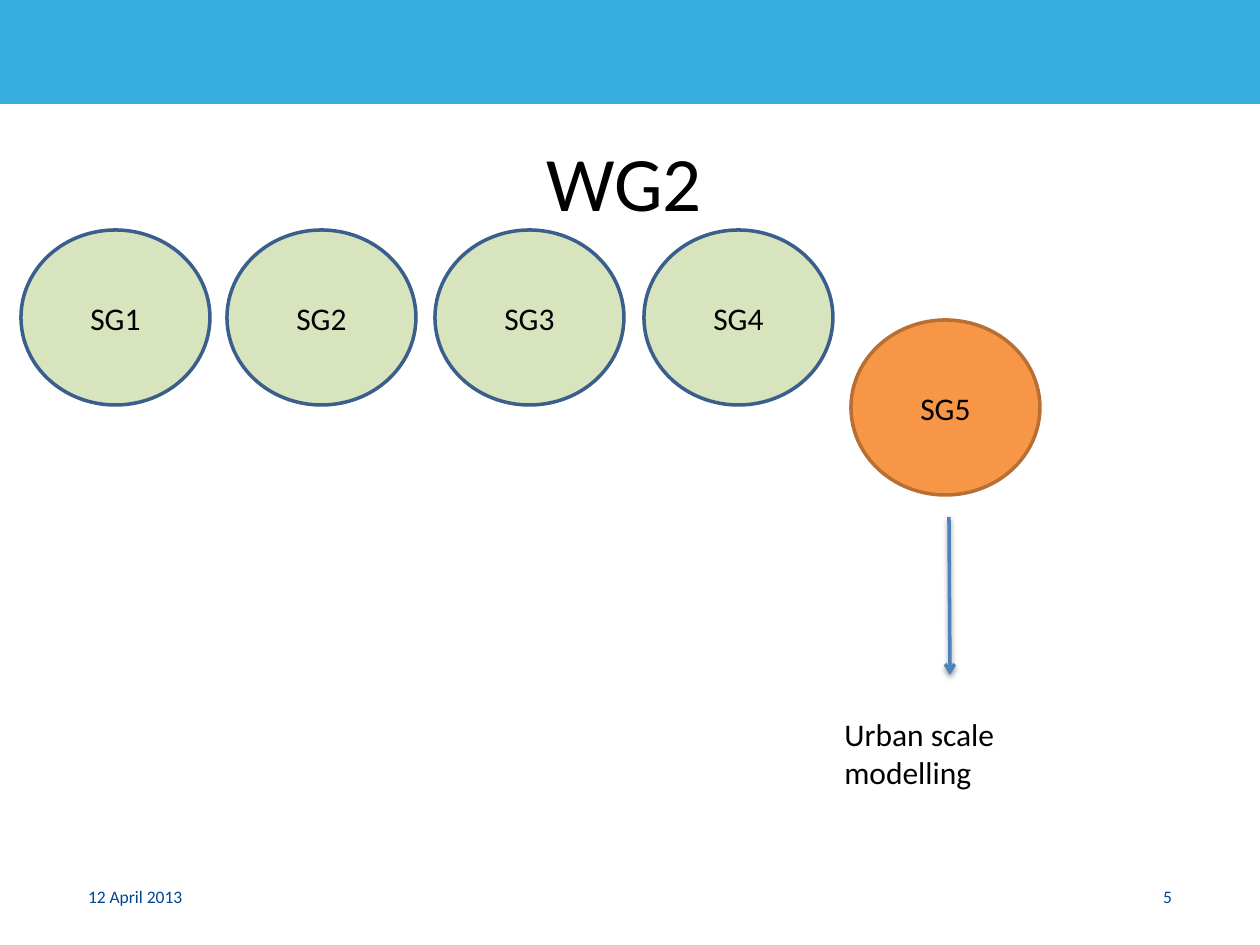
from lxml import etree
from pptx import Presentation
from pptx.dml.color import RGBColor
from pptx.enum.shapes import MSO_CONNECTOR as Connector, MSO_SHAPE as Shape
from pptx.enum.text import MSO_ANCHOR as Anchor, PP_ALIGN as Align
from pptx.oxml import parse_xml
from pptx.oxml.ns import nsdecls, qn
from pptx.util import Emu, Pt

BAND_BLUE = RGBColor(0x37, 0xAC, 0xDE)
FOOTER_BLUE = RGBColor(0x00, 0x44, 0x94)
GREEN = RGBColor(0xD7, 0xE4, 0xBD)
GREEN_EDGE = RGBColor(0x3A, 0x5F, 0x8C)
ORANGE = RGBColor(0xF7, 0x96, 0x46)
ORANGE_EDGE = RGBColor(0xB7, 0x6F, 0x34)
ARROW_BLUE = RGBColor(0x4F, 0x81, 0xBD)
BLACK = RGBColor(0, 0, 0)

PX_PER_INCH = 126
CIRCLE_WIDTH, CIRCLE_HEIGHT = 189, 175


def px(*lengths):
    return [Emu(round(length * 914400 / PX_PER_INCH)) for length in lengths]


class SlideBuilder:
    font_name = "Calibri"

    def __init__(self, slide):
        self.slide = slide

    def fill_frame(self, frame, lines, size, color, align):
        frame.word_wrap = True
        for index, line in enumerate(lines):
            paragraph = frame.add_paragraph() if index else frame.paragraphs[0]
            paragraph.text = line
            paragraph.alignment = align
            font = paragraph.font
            font.name, font.size = self.font_name, Pt(size)
            font.color.rgb = color

    def text(self, box, lines, size=18, color=BLACK, align=Align.LEFT, inset=True):
        frame = self.slide.shapes.add_textbox(*px(*box)).text_frame
        if not inset:
            frame.margin_left = frame.margin_right = 0
            frame.margin_top = frame.margin_bottom = 0
        self.fill_frame(frame, lines, size, color, align)

    def shape(self, kind, box, fill, edge, weight):
        shape = self.slide.shapes.add_shape(kind, *px(*box))
        shape.shadow.inherit = False
        shape.fill.solid()
        shape.fill.fore_color.rgb = fill
        shape.line.color.rgb = edge
        shape.line.width = Pt(weight)
        return shape

    def circle(self, left, top, label, fill, edge):
        box = (left, top, CIRCLE_WIDTH, CIRCLE_HEIGHT)
        frame = self.shape(Shape.OVAL, box, fill, edge, 2).text_frame
        frame.vertical_anchor = Anchor.MIDDLE
        self.fill_frame(frame, [label], 18, BLACK, Align.CENTER)

    def arrow(self, start, end):
        connector = self.slide.shapes.add_connector(
            Connector.STRAIGHT, *px(*start, *end))
        connector.line.color.rgb = ARROW_BLUE
        connector.line.width = Pt(2)
        properties = connector._element.spPr
        etree.SubElement(properties.find(qn("a:ln")), qn("a:tailEnd"), type="arrow")
        properties.append(parse_xml(
            f'<a:effectLst {nsdecls("a")}>'
            '<a:outerShdw blurRad="40000" dist="20000" dir="5400000" rotWithShape="0">'
            '<a:srgbClr val="000000"><a:alpha val="38000"/></a:srgbClr>'
            '</a:outerShdw></a:effectLst>'))


def main():
    presentation = Presentation()
    presentation.slide_width, presentation.slide_height = px(1260, 945)
    slide = presentation.slides.add_slide(presentation.slide_layouts[6])
    builder = SlideBuilder(slide)

    # Header band and footer
    builder.shape(Shape.RECTANGLE, (0, -1, 1260, 104), BAND_BLUE, BAND_BLUE, 0.75)
    builder.text((88, 886, 294, 21), ["12 April 2013"], 10, FOOTER_BLUE, inset=False)
    builder.text((878, 886, 294, 21), ["5"], 10, FOOTER_BLUE, Align.RIGHT, inset=False)

    # Title
    builder.text((89, 128, 1071, 203), ["WG2"], 44, align=Align.CENTER)

    # Subgroups, with the fifth one highlighted
    for number, left in enumerate((21, 227, 435, 644), start=1):
        builder.circle(left, 230, f"SG{number}", GREEN, GREEN_EDGE)
    builder.circle(851, 320, "SG5", ORANGE, ORANGE_EDGE)

    # Topic of the fifth subgroup
    builder.arrow((949, 517), (950, 675))
    builder.text((832, 709, 237, 89), ["Urban scale", "modelling"])

    presentation.save("out.pptx")


if __name__ == "__main__":
    main()
